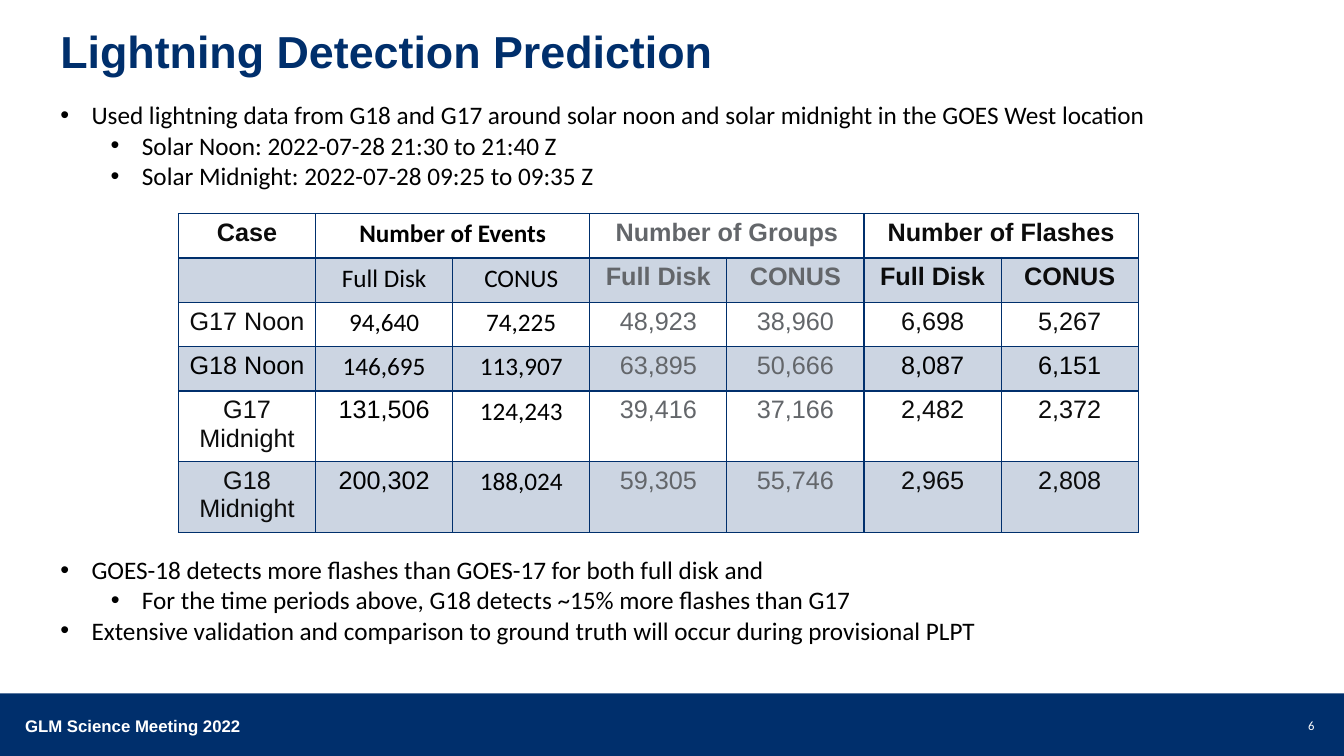
from dataclasses import dataclass

from lxml import etree
from pptx import Presentation
from pptx.dml.color import RGBColor
from pptx.enum.shapes import MSO_SHAPE
from pptx.enum.text import PP_ALIGN
from pptx.oxml.ns import qn
from pptx.slide import Slide
from pptx.table import _Cell
from pptx.text.text import Font, _Paragraph
from pptx.util import Inches, Pt

RECTANGLE = MSO_SHAPE.RECTANGLE
LEFT, CENTER = PP_ALIGN.LEFT, PP_ALIGN.CENTER


@dataclass(frozen=True)
class Theme:
    navy: str = "002F6C"
    band: str = "CCD5E2"
    white: str = "FFFFFF"
    black: str = "000000"
    near_black: str = "0C0C0C"
    gray: str = "63666A"
    heading_font: str = "Arial"
    body_font: str = "Calibri"
    title_size: int = 32
    body_size: int = 18
    footer_size: int = 12
    number_size: int = 9


THEME = Theme()


@dataclass(frozen=True)
class Style:
    font: str
    size: int
    color: str
    bold: bool = False


@dataclass(frozen=True)
class Label:
    text: str
    left: float
    top: float
    width: float
    height: float
    style: Style
    align: PP_ALIGN = LEFT
    line_spacing: float = 1.0


@dataclass(frozen=True)
class Bullet:
    text: str
    level: int = 0


@dataclass(frozen=True)
class BulletList:
    top: float
    width: float
    bullets: tuple[Bullet, ...]


LABELS = (
    Label("GLM Science Meeting 2022", 0.15, 7.07, 3.74, 0.31,
          Style(THEME.heading_font, THEME.footer_size, THEME.white, True), line_spacing=0.9),
    Label("6", 12.67, 7.07, 0.67, 0.25,
          Style(THEME.body_font, THEME.number_size, THEME.white), CENTER),
    Label("Lightning Detection Prediction", 0.5, 0.25, 12.77, 0.57,
          Style(THEME.heading_font, THEME.title_size, THEME.navy, True), line_spacing=0.9),
)
BULLET_LISTS = (
    BulletList(0.94, 12.5, (
        Bullet("Used lightning data from G18 and G17 around solar noon and solar midnight "
               "in the GOES West location"),
        Bullet("Solar Noon: 2022-07-28 21:30 to 21:40 Z", 1),
        Bullet("Solar Midnight: 2022-07-28 09:25 to 09:35 Z", 1),
    )),
    BulletList(5.45, 11.11, (
        Bullet("GOES-18 detects more flashes than GOES-17 for both full disk and"),
        Bullet("For the time periods above, G18 detects ~15% more flashes than G17", 1),
        Bullet("Extensive validation and comparison to ground truth will occur during "
               "provisional PLPT"),
    )),
)
TABLE_ROWS = (
    ("Case", "Number of Events", "", "Number of Groups", "", "Number of Flashes", ""),
    ("",) + ("Full Disk", "CONUS") * 3,
    ("G17 Noon", "94,640", "74,225", "48,923", "38,960", "6,698", "5,267"),
    ("G18 Noon", "146,695", "113,907", "63,895", "50,666", "8,087", "6,151"),
    ("G17 Midnight", "131,506", "124,243", "39,416", "37,166", "2,482", "2,372"),
    ("G18 Midnight", "200,302", "188,024", "59,305", "55,746", "2,965", "2,808"),
)
ROW_HEIGHTS = (0.44, 0.44, 0.44, 0.44, 0.7, 0.7)
COLUMN_WIDTH = 1.36
EVENT_COLUMNS, GROUP_COLUMNS = (1, 2), (3, 4)
ARIAL_EVENT_CELLS = ((4, 1), (5, 1))
BLACK_ROW = 3


def apply_style(font: Font, style: Style) -> None:
    font.name = style.font
    font.size = Pt(style.size)
    font.bold = style.bold
    font.color.rgb = RGBColor.from_string(style.color)


def add_label(page: Slide, label: Label) -> None:
    box = page.shapes.add_textbox(Inches(label.left), Inches(label.top),
                                  Inches(label.width), Inches(label.height))
    box.text_frame.word_wrap = True
    para = box.text_frame.paragraphs[0]
    para.text = label.text
    para.alignment = label.align
    para.line_spacing = label.line_spacing
    apply_style(para.font, label.style)


def add_bullet_mark(para: _Paragraph, level: int) -> None:
    properties = para._p.get_or_add_pPr()
    properties.set("marL", str(Inches(0.31 + 0.5 * level)))
    properties.set("indent", str(Inches(-0.31)))
    color = etree.SubElement(properties, qn("a:buClr"))
    etree.SubElement(color, qn("a:srgbClr"), val=THEME.black)
    etree.SubElement(properties, qn("a:buFont"), typeface=THEME.heading_font)
    etree.SubElement(properties, qn("a:buChar"), char="•")


def add_bullet_list(page: Slide, bullet_list: BulletList) -> None:
    box = page.shapes.add_textbox(Inches(0.5), Inches(bullet_list.top),
                                  Inches(bullet_list.width), Inches(1.01))
    frame = box.text_frame
    frame.word_wrap = True
    for index, bullet in enumerate(bullet_list.bullets):
        para = frame.add_paragraph() if index else frame.paragraphs[0]
        para.text = bullet.text
        para.level = bullet.level
        add_bullet_mark(para, bullet.level)
        apply_style(para.font, Style(THEME.body_font, THEME.body_size, THEME.black))


def cell_style(row: int, column: int) -> Style:
    is_event = column in EVENT_COLUMNS
    uses_body_font = is_event and (row, column) not in ARIAL_EVENT_CELLS
    color = THEME.black if is_event or row == BLACK_ROW else THEME.near_black
    if column in GROUP_COLUMNS:
        color = THEME.gray
    return Style(THEME.body_font if uses_body_font else THEME.heading_font,
                 THEME.body_size, color, row == 0 or (row == 1 and not is_event))


def add_borders(cell: _Cell, row: int) -> None:
    properties = cell._tc.get_or_add_tcPr()
    widths = {"L": 1, "R": 1, "T": 2 if row == 1 else 1, "B": 2 if row == 0 else 1}
    for side, width in widths.items():
        line = etree.SubElement(properties, qn(f"a:ln{side}"), w=str(Pt(width)))
        fill = etree.SubElement(line, qn("a:solidFill"))
        etree.SubElement(fill, qn("a:srgbClr"), val=THEME.navy)


def add_detection_table(page: Slide) -> None:
    column_count = len(TABLE_ROWS[0])
    table = page.shapes.add_table(len(TABLE_ROWS), column_count, Inches(1.77), Inches(2.12),
                                  Inches(COLUMN_WIDTH * column_count),
                                  Inches(sum(ROW_HEIGHTS))).table
    for column in table.columns:
        column.width = Inches(COLUMN_WIDTH)
    for row, (texts, height) in enumerate(zip(TABLE_ROWS, ROW_HEIGHTS)):
        table.rows[row].height = Inches(height)
        for column, text in enumerate(texts):
            cell = table.cell(row, column)
            add_borders(cell, row)
            cell.fill.solid()
            cell.fill.fore_color.rgb = RGBColor.from_string(THEME.band if row % 2 else THEME.white)
            para = cell.text_frame.paragraphs[0]
            para.text = text
            para.alignment = CENTER
            apply_style(para.font, cell_style(row, column))
    for column in range(1, column_count, 2):
        table.cell(0, column).merge(table.cell(0, column + 1))


def add_footer_band(page: Slide) -> None:
    band = page.shapes.add_shape(RECTANGLE, 0, Inches(6.88), Inches(13.33), Inches(0.62))
    band.shadow.inherit = False
    band.fill.solid()
    band.fill.fore_color.rgb = RGBColor.from_string(THEME.navy)
    band.line.fill.background()


def main() -> None:
    deck = Presentation()
    deck.slide_width, deck.slide_height = Inches(13.33), Inches(7.5)
    page = deck.slides.add_slide(deck.slide_layouts[6])
    add_footer_band(page)
    for label in LABELS:
        add_label(page, label)
    for bullet_list in BULLET_LISTS:
        add_bullet_list(page, bullet_list)
    add_detection_table(page)
    deck.save("out.pptx")


if __name__ == "__main__":
    main()
